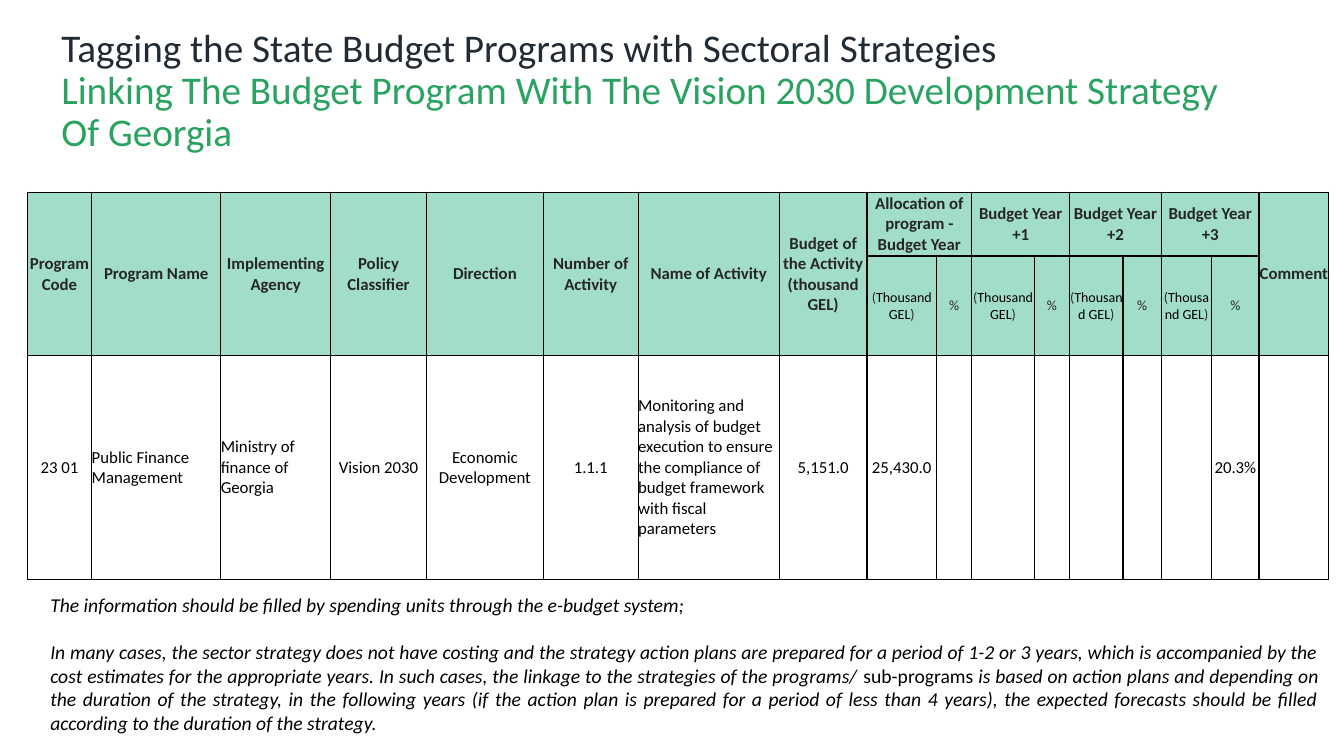
import pptx
import pptx.dml.color
import pptx.enum.text
import pptx.oxml
import pptx.oxml.ns
import pptx.util
from pptx.util import Inches

FONT = "Calibri"
COLORS = {
    "title": "222A35",
    "subtitle": "2AA260",
    "header_fill": "A2DEC7",
    "header_text": "262626",
    "black": "000000",
}
ALIGN = pptx.enum.text.PP_ALIGN
ANCHOR = pptx.enum.text.MSO_ANCHOR

COLUMN_WIDTHS = [0.64, 1.28, 1.09, 0.95, 1.16, 0.94, 1.4, 0.87, 0.69,
                 0.35, 0.62, 0.35, 0.53, 0.38, 0.5, 0.47, 0.69]
ROW_HEIGHTS = [0.63, 0.99, 2.22]
TALL_HEADERS = {
    0: "Program Code", 1: "Program Name", 2: "Implementing Agency",
    3: "Policy Classifier", 4: "Direction", 5: "Number of Activity",
    6: "Name of Activity", 7: "Budget of the Activity (thousand GEL)",
    16: "Comment",
}
YEAR_HEADERS = {
    8: "Allocation of program - Budget Year", 10: "Budget Year +1",
    12: "Budget Year +2", 14: "Budget Year +3",
}
PROGRAM = {
    0: "23 01", 1: "Public Finance Management",
    2: "Ministry of finance of Georgia", 3: "Vision 2030",
    4: "Economic Development", 5: "1.1.1",
    6: "Monitoring and analysis of budget execution to ensure the compliance "
       "of budget framework with fiscal parameters",
    7: "5,151.0", 8: "25,430.0", 15: "20.3%",
}
LEFT_ALIGNED = (1, 2, 6)


def color(name):
    return pptx.dml.color.RGBColor.from_string(COLORS[name])


def style_font(font, size, color_name, bold=False, italic=False):
    font.name = FONT
    font.size = pptx.util.Pt(size)
    font.color.rgb = color(color_name)
    font.bold = bold
    font.italic = italic


def add_text_box(page, left, top, width, height):
    box = page.shapes.add_textbox(Inches(left), Inches(top), Inches(width), Inches(height))
    box.text_frame.word_wrap = True
    return box.text_frame


def add_title(page):
    frame = add_text_box(page, 0.51, 0.22, 11.92, 1.38)
    frame.vertical_anchor = ANCHOR.MIDDLE
    para = frame.paragraphs[0]
    para.line_spacing = 0.9
    span = para.add_run()
    span.text = "Tagging the State Budget Programs with Sectoral Strategies"
    style_font(span.font, 28, "title")
    para.add_line_break()
    span = para.add_run()
    span.text = ("Linking The Budget Program With The Vision 2030 "
                 "Development Strategy Of Georgia")
    style_font(span.font, 28, "subtitle")


def set_borders(cell):
    properties = cell._tc.get_or_add_tcPr()
    for position, side in enumerate(("lnL", "lnR", "lnT", "lnB")):
        line = pptx.oxml.parse_xml(
            f'<a:{side} {pptx.oxml.ns.nsdecls("a")} w="12700"><a:solidFill>'
            f'<a:srgbClr val="{COLORS["black"]}"/></a:solidFill></a:{side}>')
        properties.insert(position, line)


def format_cell(cell, filled):
    cell.margin_left = cell.margin_right = cell.margin_top = cell.margin_bottom = 0
    cell.vertical_anchor = ANCHOR.MIDDLE
    if filled:
        cell.fill.solid()
        cell.fill.fore_color.rgb = color("header_fill")
    else:
        cell.fill.background()
    set_borders(cell)


def write_cell(cell, text, size=12, color_name="black", bold=False, align=ALIGN.CENTER):
    para = cell.text_frame.paragraphs[0]
    para.text = text
    para.alignment = align
    style_font(para.font, size, color_name, bold)


def write_unit(cell):
    para = cell.text_frame.paragraphs[0]
    para.alignment = ALIGN.CENTER
    for text, color_name in (("(", "header_text"), ("Thousand GEL", "black"),
                             (")", "header_text")):
        span = para.add_run()
        span.text = text
        style_font(span.font, 10, color_name)


def add_program_table(page):
    table = page.shapes.add_table(
        len(ROW_HEIGHTS), len(COLUMN_WIDTHS), Inches(0.27), Inches(1.91),
        Inches(sum(COLUMN_WIDTHS)), Inches(sum(ROW_HEIGHTS))).table
    for column, width in zip(table.columns, COLUMN_WIDTHS):
        column.width = Inches(width)
    for index, height in enumerate(ROW_HEIGHTS):
        table.rows[index].height = Inches(height)
        for cell in table.rows[index].cells:
            format_cell(cell, filled=index < 2)

    # Headers
    for column, text in TALL_HEADERS.items():
        table.cell(0, column).merge(table.cell(1, column))
        write_cell(table.cell(0, column), text, 12, "header_text", True)
    for column, text in YEAR_HEADERS.items():
        table.cell(0, column).merge(table.cell(0, column + 1))
        write_cell(table.cell(0, column), text, 12, "header_text", True)
        write_unit(table.cell(1, column))
        write_cell(table.cell(1, column + 1), "%", 10, "header_text")

    # Program row
    for column, text in PROGRAM.items():
        align = ALIGN.LEFT if column in LEFT_ALIGNED else ALIGN.CENTER
        write_cell(table.cell(2, column), text, align=align)


def add_notes_below(page):
    frame = add_text_box(page, 0.4, 5.83, 12.78, 1.51)
    first = frame.paragraphs[0]
    first.text = ("The information should be filled by spending units "
                  "through the e-budget system;")
    first.alignment = ALIGN.JUSTIFY
    style_font(first.font, 14, "black", italic=True)

    second = frame.add_paragraph()
    second.alignment = ALIGN.JUSTIFY
    second.space_before = pptx.util.Pt(17)
    parts = (
        ("In many cases, the sector strategy does not have costing and the strategy "
         "action plans are prepared for a period of 1-2 or 3 years, which is "
         "accompanied by the cost estimates for the appropriate years. In such cases, "
         "the linkage to the strategies of the programs/ ", True),
        ("sub-programs ", False),
        ("is based on action plans and depending on the duration of the strategy, in "
         "the following years (if the action plan is prepared for a period of less "
         "than 4 years), the expected forecasts should be filled according to the "
         "duration of the strategy.", True),
    )
    for text, italic in parts:
        span = second.add_run()
        span.text = text
        style_font(span.font, 14, "black", italic=italic)


def main():
    deck = pptx.Presentation()
    deck.slide_width = Inches(13.33)
    deck.slide_height = Inches(7.5)
    page = deck.slides.add_slide(deck.slide_layouts[6])
    add_title(page)
    add_program_table(page)
    add_notes_below(page)
    deck.save("out.pptx")


if __name__ == "__main__":
    main()
